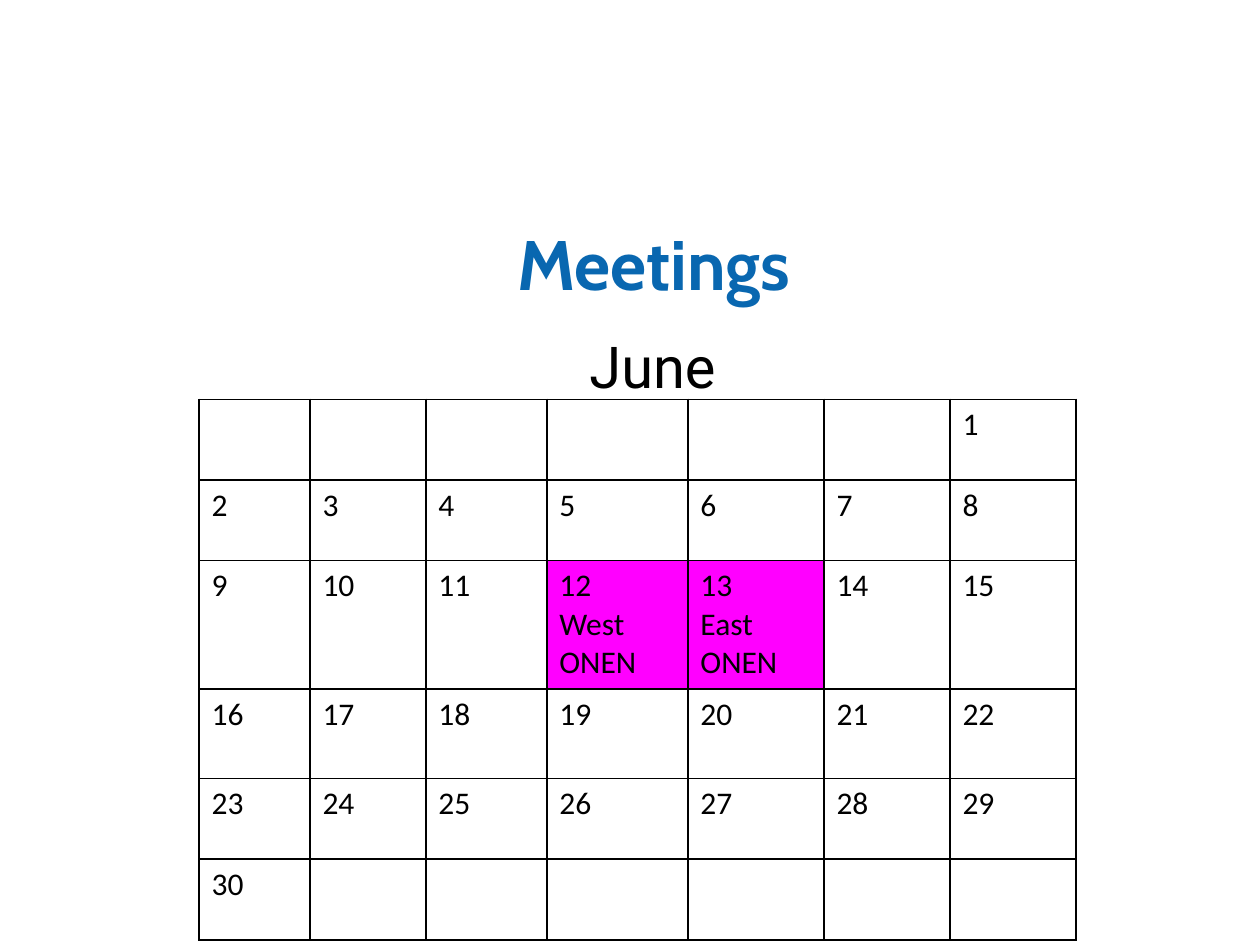
from lxml.etree import SubElement
from pptx import Presentation
from pptx.dml.color import RGBColor
from pptx.enum.text import MSO_ANCHOR, PP_ALIGN
from pptx.oxml.ns import qn
from pptx.util import Inches, Pt

BLUE = RGBColor(0x09, 0x67, 0xB0)
BLACK = RGBColor(0, 0, 0)
MAGENTA = RGBColor(0xFF, 0, 0xFF)

TITLE, MONTH = "Meetings", "June"
DAYS, FIRST_COLUMN = 30, 6
MEETINGS = {12: ["West ONEN"], 13: ["East", "ONEN"]}
COL_WIDTHS = [0.88, 0.92, 0.96, 1.12, 1.08, 1, 1]
ROW_HEIGHTS = [0.64, 0.64, 1.02, 0.71, 0.64, 0.64]

TITLE_FONT = {"name": "Cabin", "size": Pt(40), "bold": True}
MONTH_FONT = {"name": "Roboto", "size": Pt(33)}
DAY_FONT = {"name": "Calibri", "size": Pt(18)}


def write(tf, lines, font, color, align=PP_ALIGN.LEFT):
    for i, line in enumerate(lines):
        p = tf.add_paragraph() if i else tf.paragraphs[0]
        p.alignment = align
        r = p.add_run()
        r.text = line
        for name, value in font.items():
            setattr(r.font, name, value)
        r.font.color.rgb = color


def add_borders(cell):
    """Draw a 1 pt black line on all four sides of a cell."""
    tc_pr = cell._tc.get_or_add_tcPr()
    for side in ("lnL", "lnR", "lnT", "lnB"):
        ln = SubElement(tc_pr, qn(f"a:{side}"), w=str(Pt(1)))
        fill = SubElement(ln, qn("a:solidFill"))
        SubElement(fill, qn("a:srgbClr"), val=str(BLACK))


def add_calendar(s):
    frame = s.shapes.add_table(
        len(ROW_HEIGHTS), len(COL_WIDTHS), Inches(1.58), Inches(3.17),
        Inches(sum(COL_WIDTHS)), Inches(sum(ROW_HEIGHTS)))
    table = frame.table
    table.first_row = table.horz_banding = False
    for col, width in zip(table.columns, COL_WIDTHS):
        col.width = Inches(width)
    for row, height in zip(table.rows, ROW_HEIGHTS):
        row.height = Inches(height)

    for i, cell in enumerate(table.iter_cells()):
        day = i - FIRST_COLUMN + 1
        add_borders(cell)
        if day in MEETINGS:
            cell.fill.solid()
            cell.fill.fore_color.rgb = MAGENTA
        else:
            cell.fill.background()
        if 1 <= day <= DAYS:
            lines = [str(day)] + MEETINGS.get(day, [])
            write(cell.text_frame, lines, DAY_FONT, BLACK)


def main():
    prs = Presentation()
    prs.slide_width, prs.slide_height = Inches(10), Inches(7.5)
    s = prs.slides.add_slide(prs.slide_layouts[5])

    title = s.shapes.title
    title.left, title.top = Inches(2.94), Inches(1.25)
    title.width, title.height = Inches(4.5), Inches(1.67)
    title.text_frame.vertical_anchor = MSO_ANCHOR.MIDDLE
    write(title.text_frame, [TITLE], TITLE_FONT, BLUE, PP_ALIGN.CENTER)

    add_calendar(s)

    month = s.shapes.add_textbox(
        Inches(4.58), Inches(2.58), Inches(1.21), Inches(0.66))
    write(month.text_frame, [MONTH], MONTH_FONT, BLACK)

    prs.save("out.pptx")


if __name__ == "__main__":
    main()
